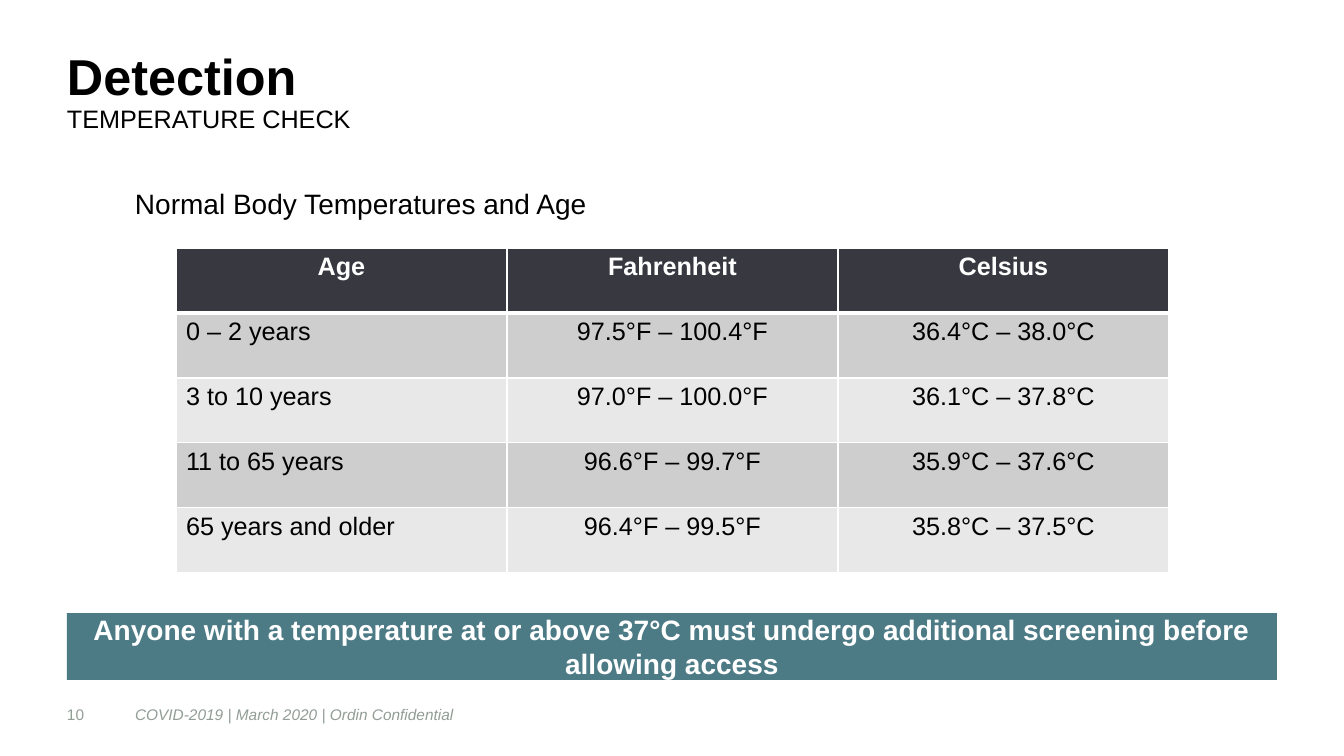
from lxml.etree import SubElement
from pptx import Presentation
from pptx.dml.color import RGBColor
from pptx.enum.text import MSO_ANCHOR, MSO_AUTO_SIZE, PP_ALIGN
from pptx.oxml.ns import qn
from pptx.util import Pt

PX = 914400 / 100.8
COLORS = {
    "black": "000000",
    "white": "FFFFFF",
    "footer": "929D96",
    "alert": "4C7B86",
    "header": "383841",
    "odd": "CECECF",
    "even": "E8E8E9",
}
TEMPERATURES = [
    ("Age", "Fahrenheit", "Celsius"),
    ("0 – 2 years", "97.5°F – 100.4°F", "36.4°C – 38.0°C"),
    ("3 to 10 years", "97.0°F – 100.0°F", "36.1°C – 37.8°C"),
    ("11 to 65 years", "96.6°F – 99.7°F", "35.9°C – 37.6°C"),
    ("65 years and older", "96.4°F – 99.5°F", "35.8°C – 37.5°C"),
]


def px(length):
    return round(length * PX)


def color(name):
    return RGBColor.from_string(COLORS[name])


def place(shape, left, top, width, height):
    shape.left, shape.top = px(left), px(top)
    shape.width, shape.height = px(width), px(height)


def style(paragraph, size, ink="black", bold=False, italic=False, align=PP_ALIGN.LEFT):
    paragraph.alignment = align
    for run in paragraph.runs:
        font = run.font
        font.name, font.size = "Arial", Pt(size)
        font.bold, font.italic = bold, italic
        font.color.rgb = color(ink)


def set_frame(frame, side=0, vertical=0):
    frame.word_wrap = True
    frame.auto_size = MSO_AUTO_SIZE.NONE
    frame.vertical_anchor = MSO_ANCHOR.MIDDLE
    frame.margin_left = frame.margin_right = px(side)
    frame.margin_top = frame.margin_bottom = px(vertical)


def add_title(slide, heading, subheading):
    title = slide.shapes.title
    place(title, 67, 42, 1210, 102)
    set_frame(title.text_frame)
    title.text_frame.text = f"{heading}\n{subheading}"
    first, second = title.text_frame.paragraphs
    style(first, 36, bold=True)
    style(second, 18)
    first.line_spacing = second.line_spacing = 0.9


def add_alert(slide, message):
    alert = slide.placeholders[1]
    place(alert, 67, 613, 1210, 67)
    alert.fill.solid()
    alert.fill.fore_color.rgb = color("alert")
    set_frame(alert.text_frame, side=20)
    alert.text_frame.text = message
    paragraph = alert.text_frame.paragraphs[0]
    properties = paragraph._p.get_or_add_pPr()
    properties.set("marL", "0")
    properties.set("indent", "0")
    SubElement(properties, qn("a:buNone"))
    paragraph.space_before = Pt(0)
    style(paragraph, 20, "white", bold=True, align=PP_ALIGN.CENTER)


def add_label(slide, text, box, size, ink, inset=0, italic=False):
    label = slide.shapes.add_textbox(*map(px, box))
    set_frame(label.text_frame, side=inset, vertical=inset // 2)
    label.text_frame.text = text
    style(label.text_frame.paragraphs[0], size, ink, italic=italic)


def set_borders(cell, top, bottom):
    properties = cell._tc.get_or_add_tcPr()
    for side, width in (("L", 1), ("R", 1), ("T", top), ("B", bottom)):
        line = SubElement(properties, qn(f"a:ln{side}"), w=str(Pt(width)))
        fill = SubElement(line, qn("a:solidFill"))
        SubElement(fill, qn("a:srgbClr"), val=COLORS["white"])


def add_temperature_table(slide, rows):
    box = map(px, (176, 248, 993, 325))
    table = slide.shapes.add_table(len(rows), len(rows[0]), *box).table
    for r, values in enumerate(rows):
        is_header = r == 0
        shade = "header" if is_header else "odd" if r % 2 else "even"
        for c, value in enumerate(values):
            cell = table.cell(r, c)
            set_borders(cell, top=3 if r == 1 else 1, bottom=3 if is_header else 1)
            cell.fill.solid()
            cell.fill.fore_color.rgb = color(shade)
            cell.text_frame.text = value
            style(
                cell.text_frame.paragraphs[0],
                18,
                "white" if is_header else "black",
                bold=is_header,
                align=PP_ALIGN.CENTER if is_header or c else PP_ALIGN.LEFT,
            )


def main():
    presentation = Presentation()
    presentation.slide_width, presentation.slide_height = px(1344), px(756)
    slide = presentation.slides.add_slide(presentation.slide_layouts[1])
    add_title(slide, "Detection", "TEMPERATURE CHECK")
    add_label(slide, "COVID-2019 | March 2020 | Ordin Confidential",
              (135, 698, 385, 33), 11, "footer", italic=True)
    add_label(slide, "10", (67, 698, 68, 33), 11, "footer")
    add_alert(slide, "Anyone with a temperature at or above 37°C must undergo "
                     "additional screening before allowing access")
    add_label(slide, "Normal Body Temperatures and Age",
              (125, 181, 476, 44), 20, "black", inset=10)
    add_temperature_table(slide, TEMPERATURES)
    presentation.save("out.pptx")


if __name__ == "__main__":
    main()
